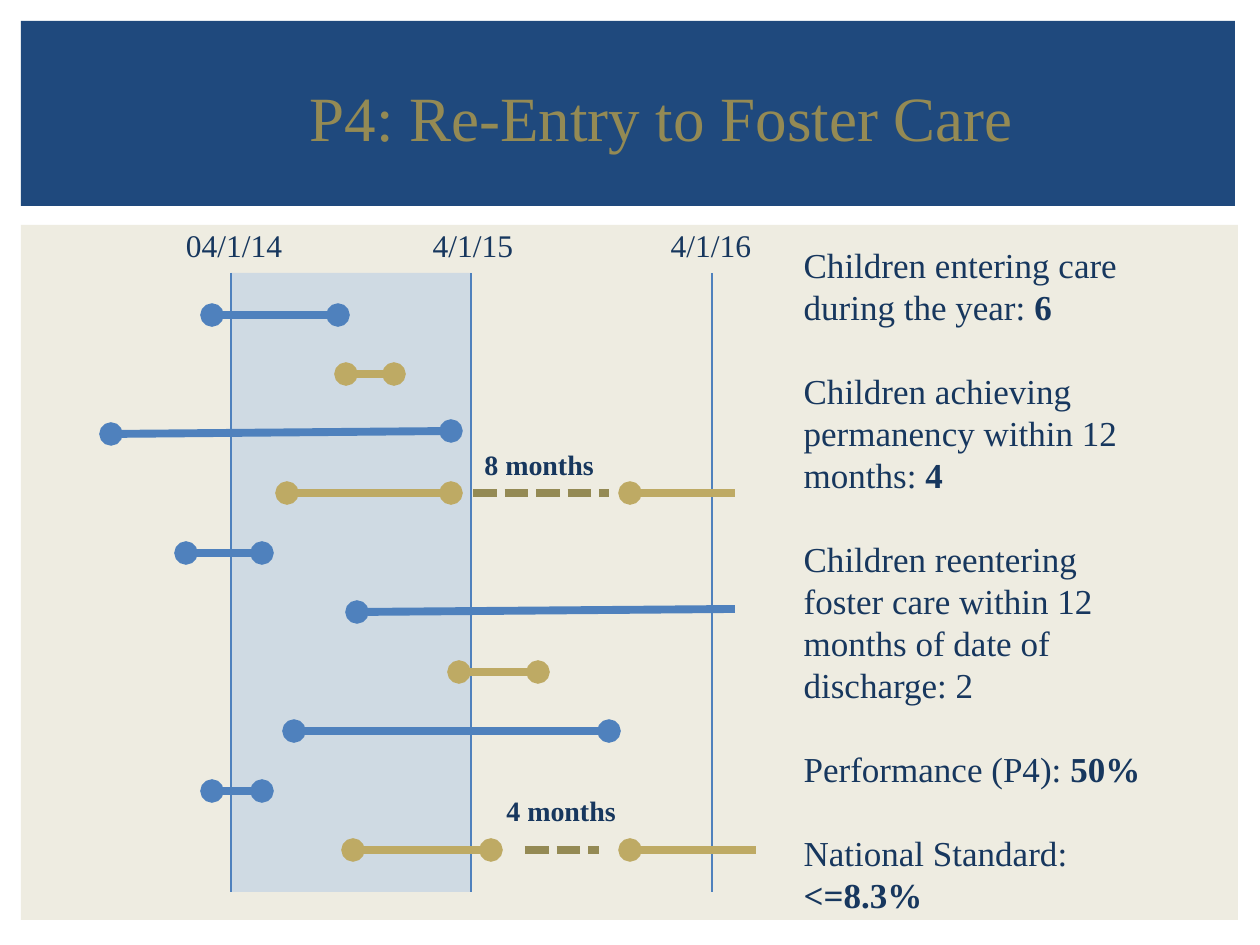
import pptx
import pptx.util
import pptx.dml.color
import pptx.enum.dml
import pptx.enum.shapes
import pptx.enum.text
import pptx.oxml
import pptx.oxml.ns

THEME = {
    "font": "Times New Roman",
    "panel": "EEECE1", "banner": "1F497D", "title": "948A54", "text": "17375E",
    "window": "B9CDE5", "blue": "4F81BD", "gold": "BEAA64", "gap": "948A54",
    "title_pt": 36, "body_pt": 20, "date_pt": 18, "note_pt": 16,
    "line_pt": 24, "grid_w": 1.5, "stay_w": 4.5,
}

# Content
TITLE = "P4: Re-Entry to Foster Care"
FACTS = [  # (plain text, bold text)
    ("Children entering care during the year: ", "6"),
    ("Children achieving permanency within 12 months: ", "4"),
    ("Children reentering foster care within 12 months of date of discharge: 2", ""),
    ("Performance (P4): ", "50%"),
    ("National Standard: ", "<=8.3%"),
]
DATES = [("04/1/14", 231, 234), ("4/1/15", 471, 473), ("4/1/16", 712, 711)]  # line x, label centre
STAYS = [  # row, start x, end x, rise, colour, has an end dot
    (0, 212, 338, 0, "blue", True),
    (1, 346, 394, 0, "gold", True),
    (2, 111, 451, 3, "blue", True),
    (3, 287, 451, 0, "gold", True),
    (3, 630, 735, 0, "gold", False),
    (4, 186, 262, 0, "blue", True),
    (5, 357, 735, 3, "blue", False),
    (6, 459, 538, 0, "gold", True),
    (7, 294, 609, 0, "blue", True),
    (8, 212, 262, 0, "blue", True),
    (9, 353, 491, 0, "gold", True),
    (9, 630, 756, 0, "gold", False),
]
GAPS = [  # row, start x, end x, label, label left, label top
    (3, 473, 609, "8 months", 472, 441),
    (9, 525, 599, "4 months", 494, 787),
]
GRID_TOP, GRID_BOTTOM = 273, 892
ROW_TOP, ROW_BOTTOM, ROWS = 315, 850, 10


def px(n):
    return pptx.util.Emu(round(n * 914400 / 126))


def rgb(name):
    return pptx.dml.color.RGBColor.from_string(THEME[name])


def row_y(row):
    return ROW_TOP + round(row * (ROW_BOTTOM - ROW_TOP) / (ROWS - 1))


def place(sp, *box):
    for name, n in zip(("left", "top", "width", "height"), box):
        setattr(sp, name, px(n))


def add_run(p, text, size, color="text", bold=False):
    r = p.add_run()
    r.text = text
    r.font.color.rgb = rgb(color)
    style = {"name": THEME["font"], "size": pptx.util.Pt(THEME[size]), "bold": bold}
    for name, value in style.items():
        setattr(r.font, name, value)


def add_rect(slide, color, *box):
    sp = slide.shapes.add_shape(pptx.enum.shapes.MSO_SHAPE.RECTANGLE, *map(px, box))
    sp.shadow.inherit = False
    sp.fill.solid()
    sp.fill.fore_color.rgb = rgb(color)
    sp.line.fill.background()
    return sp


def add_line(slide, x1, y1, x2, y2, color, width, ends=(), dashed=False):
    sp = slide.shapes.add_connector(
        pptx.enum.shapes.MSO_CONNECTOR.STRAIGHT, *map(px, (x1, y1, x2, y2)))
    sp.line.color.rgb = rgb(color)
    sp.line.width = pptx.util.Pt(THEME[width])
    if dashed:
        sp.line.dash_style = pptx.enum.dml.MSO_LINE.SQUARE_DOT
    props = sp._element.spPr
    ln = props.find(pptx.oxml.ns.qn("a:ln"))
    for end in ends:
        ln.append(pptx.oxml.parse_xml(f'<a:{end} {pptx.oxml.ns.nsdecls("a")} type="oval"/>'))
    props.append(pptx.oxml.parse_xml(f'<a:effectLst {pptx.oxml.ns.nsdecls("a")}/>'))


def add_label(slide, text, size, box, wrap, align, bold=False):
    tf = slide.shapes.add_textbox(*map(px, box)).text_frame
    tf.word_wrap = wrap
    tf.paragraphs[0].alignment = align
    add_run(tf.paragraphs[0], text, size, bold=bold)


def set_indent(p, left):
    props = p._p.get_or_add_pPr()
    props.set("marL", str(px(left)))
    props.set("indent", "0")
    return props


def main():
    align = pptx.enum.text.PP_ALIGN
    prs = pptx.Presentation()
    prs.slide_width, prs.slide_height = px(1260), px(945)
    slide = prs.slides.add_slide(prs.slide_layouts[1])
    title, body = slide.placeholders

    # Background panels, behind the placeholders
    panels = [add_rect(slide, "panel", 21, 225, 1217, 695),
              add_rect(slide, "banner", 21, 21, 1214, 185)]
    for sp in panels:
        title._element.addprevious(sp._element)

    # Title
    place(title, 0, 38, 1260, 157)
    title.text_frame.vertical_anchor = pptx.enum.text.MSO_ANCHOR.MIDDLE
    p = title.text_frame.paragraphs[0]
    p.alignment = align.CENTER
    set_indent(p, 63)
    add_run(p, TITLE, "title_pt", "title")

    # Facts, one empty line apart
    place(body, 791, 237, 365, 692)
    tf = body.text_frame
    tf.word_wrap = True
    tf.auto_size = pptx.enum.text.MSO_AUTO_SIZE.NONE
    line = pptx.util.Pt(THEME["line_pt"])
    for i, (plain, bold) in enumerate(FACTS):
        p = tf.add_paragraph() if i else tf.paragraphs[0]
        p.line_spacing = line
        p.space_before = line if i else pptx.util.Pt(0)
        set_indent(p, 0).append(pptx.oxml.parse_xml(
            f'<a:buNone {pptx.oxml.ns.nsdecls("a")}/>'))
        add_run(p, plain, "body_pt")
        if bold:
            add_run(p, bold, "body_pt", bold=True)

    # Entry year window
    start, end = DATES[0][1], DATES[1][1]
    window = add_rect(slide, "window", start, GRID_TOP, end - start, GRID_BOTTOM - GRID_TOP)
    window._element.spPr.find(".//" + pptx.oxml.ns.qn("a:srgbClr")).append(
        pptx.oxml.parse_xml(f'<a:alpha {pptx.oxml.ns.nsdecls("a")} val="57000"/>'))

    # Date lines and labels
    for text, x, centre in DATES:
        add_line(slide, x, GRID_TOP, x, GRID_BOTTOM, "blue", "grid_w")
        add_label(slide, text, "date_pt", (centre - 61, 220, 122, 50), False, align.CENTER)

    # Stays in care
    for row, x1, x2, rise, color, closed in STAYS:
        y = row_y(row)
        ends = ("headEnd", "tailEnd") if closed else ("headEnd",)
        add_line(slide, x1, y, x2, y - rise, color, "stay_w", ends)

    # Time between discharge and reentry
    for row, x1, x2, text, left, top in GAPS:
        add_line(slide, x1, row_y(row), x2, row_y(row), "gap", "stay_w", dashed=True)
        add_label(slide, text, "note_pt", (left, top, 136, 47), True, align.LEFT, bold=True)

    prs.save("out.pptx")


if __name__ == "__main__":
    main()
